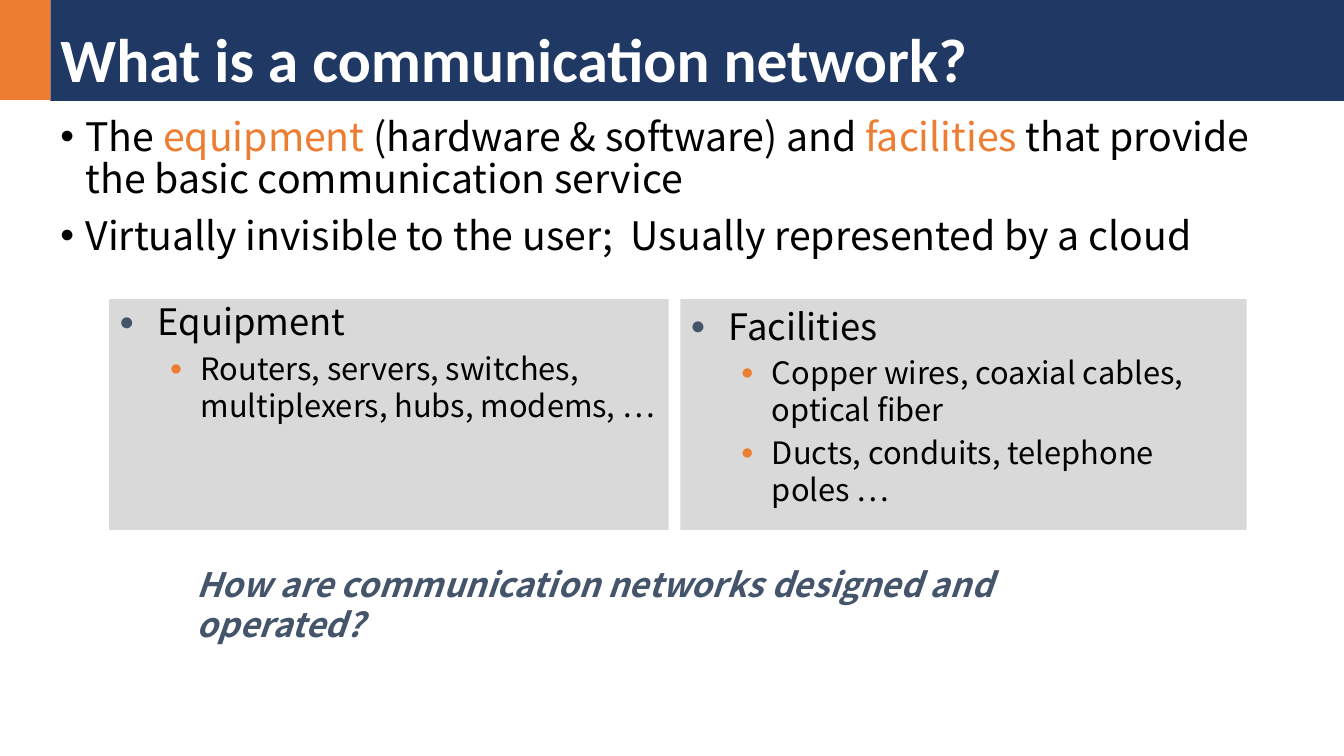
"""Builds a slide that defines a communication network."""
from dataclasses import dataclass
from lxml.etree import SubElement as Sub
from pptx import Presentation
from pptx.dml.color import RGBColor as RGB
from pptx.enum.shapes import MSO_SHAPE as SHAPE
from pptx.enum.text import MSO_ANCHOR as ANCHOR, MSO_AUTO_SIZE as FIT, PP_ALIGN as ALIGN
from pptx.oxml.ns import qn
from pptx.util import Inches, Pt


@dataclass(frozen=True)
class Theme:
    navy: str = "203864"
    orange: str = "ED7D31"
    slate: str = "44546A"
    panel: str = "D9D9D9"
    white: str = "FFFFFF"
    black: str = "000000"
    head_font: str = "Calibri"
    font: str = "Noto Sans CJK KR"
    title: int = 44
    body: int = 28
    topic: int = 26
    detail: int = 22
    question: int = 24


T = Theme()
prs = Presentation()
prs.slide_width, prs.slide_height = Inches(13.33), Inches(7.5)
COL, ROW = prs.slide_width / 160, prs.slide_height / 90


def add_run(p, text, size, color, font=T.font, bold=False, italic=False):
    r = p.add_run()
    r.text = text
    f = r.font
    f.name, f.size, f.bold, f.italic = font, Pt(size), bold, italic
    f.color.rgb = RGB.from_string(color)


def add_bullet(p, char, left, hang, color, percent):
    pPr = p._p.get_or_add_pPr()
    pPr.set("marL", str(Inches(left)))
    pPr.set("indent", str(-Inches(hang)))
    Sub(Sub(pPr, qn("a:buClr")), qn("a:srgbClr"), val=color)
    Sub(pPr, qn("a:buSzPct"), val=str(percent * 1000))
    Sub(pPr, qn("a:buFont"), typeface="Arial")
    Sub(pPr, qn("a:buChar"), char=char)


s = prs.slides.add_slide(prs.slide_layouts[5])

sp = s.shapes.add_shape(SHAPE.RECTANGLE, 0, 0, int(6 * COL), int(11.9 * ROW))
sp.shadow.inherit = False
sp.fill.solid()
sp.fill.fore_color.rgb = RGB.from_string(T.orange)
sp.line.fill.background()

sp = s.shapes.title
sp.left, sp.top = int(6 * COL), 0
sp.width, sp.height = int(154 * COL), int(12 * ROW)
sp.fill.solid()
sp.fill.fore_color.rgb = RGB.from_string(T.navy)
tf = sp.text_frame
tf.auto_size, tf.vertical_anchor = FIT.NONE, ANCHOR.BOTTOM
p = tf.paragraphs[0]
p.alignment, p.line_spacing = ALIGN.LEFT, 0.9
add_run(p, "What is a communication network?", T.title, T.white, T.head_font, bold=True)

points = [
    [("The ", T.black), ("equipment", T.orange), (" (hardware & software) and ", T.black),
     ("facilities", T.orange), (" that provide the basic communication service", T.black)],
    [("Virtually invisible to the user;  Usually represented by a cloud", T.black)],
]
sp = s.shapes.add_textbox(int(6 * COL), int(13.4 * ROW), int(147 * COL), int(37.8 * ROW))
tf = sp.text_frame
tf.word_wrap = True
for i, runs in enumerate(points):
    p = tf.add_paragraph() if i else tf.paragraphs[0]
    p.line_spacing, p.space_before = 0.9, Pt(10)
    add_bullet(p, "•", 0.25, 0.25, T.black, 100)
    for text, color in runs:
        add_run(p, text, T.body, color)

panels = [
    (13, 66.6, 0.9, "Equipment", ["Routers, servers, switches, multiplexers, hubs, modems, …"]),
    (81, 67.4, 1.0, "Facilities", ["Copper wires, coaxial cables, optical fiber",
                                   "Ducts, conduits, telephone poles …"]),
]
for col, cols, spacing, topic, details in panels:
    sp = s.shapes.add_shape(SHAPE.RECTANGLE, int(col * COL), int(35.6 * ROW),
                            int(cols * COL), int(27.5 * ROW))
    sp.shadow.inherit = False
    sp.fill.solid()
    sp.fill.fore_color.rgb = RGB.from_string(T.panel)
    sp.line.fill.background()
    tf = sp.text_frame
    tf.word_wrap, tf.vertical_anchor = True, ANCHOR.TOP
    p = tf.paragraphs[0]
    p.alignment, p.line_spacing, p.space_before = ALIGN.LEFT, spacing, Pt(0.2 * T.topic)
    add_bullet(p, "●", 0.48 - 0.1, 0.38, T.slate, 70)
    add_run(p, topic, T.topic, T.black)
    for detail in details:
        p = tf.add_paragraph()
        p.level, p.alignment, p.space_before = 1, ALIGN.LEFT, Pt(0.2 * T.detail)
        add_bullet(p, "●", 0.81, 0.31, T.orange, 70)
        add_run(p, detail, T.detail, T.black)

sp = s.shapes.add_textbox(int(22.2 * COL), int(66.5 * ROW), int(117.5 * COL), int(6 * ROW))
tf = sp.text_frame
tf.word_wrap = True
add_run(tf.paragraphs[0], "How are communication networks designed and operated?",
        T.question, T.slate, bold=True, italic=True)

prs.save("out.pptx")
